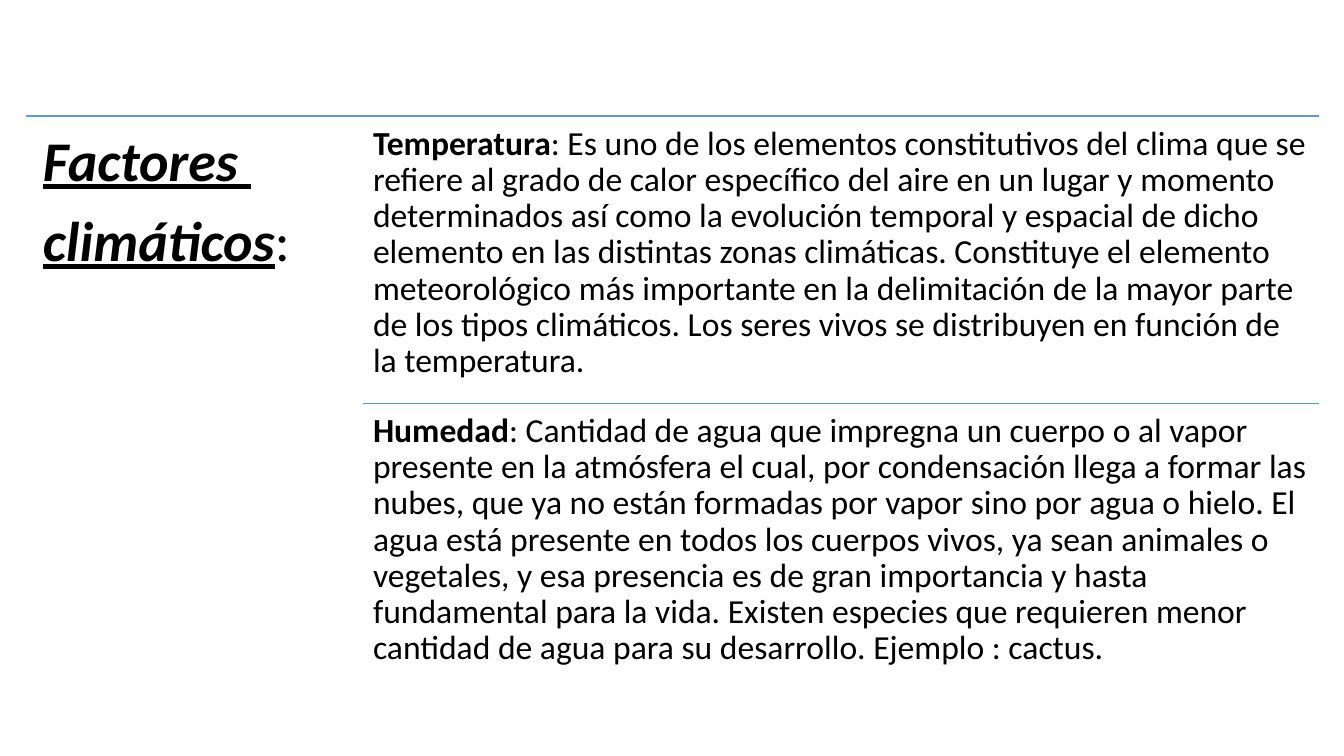
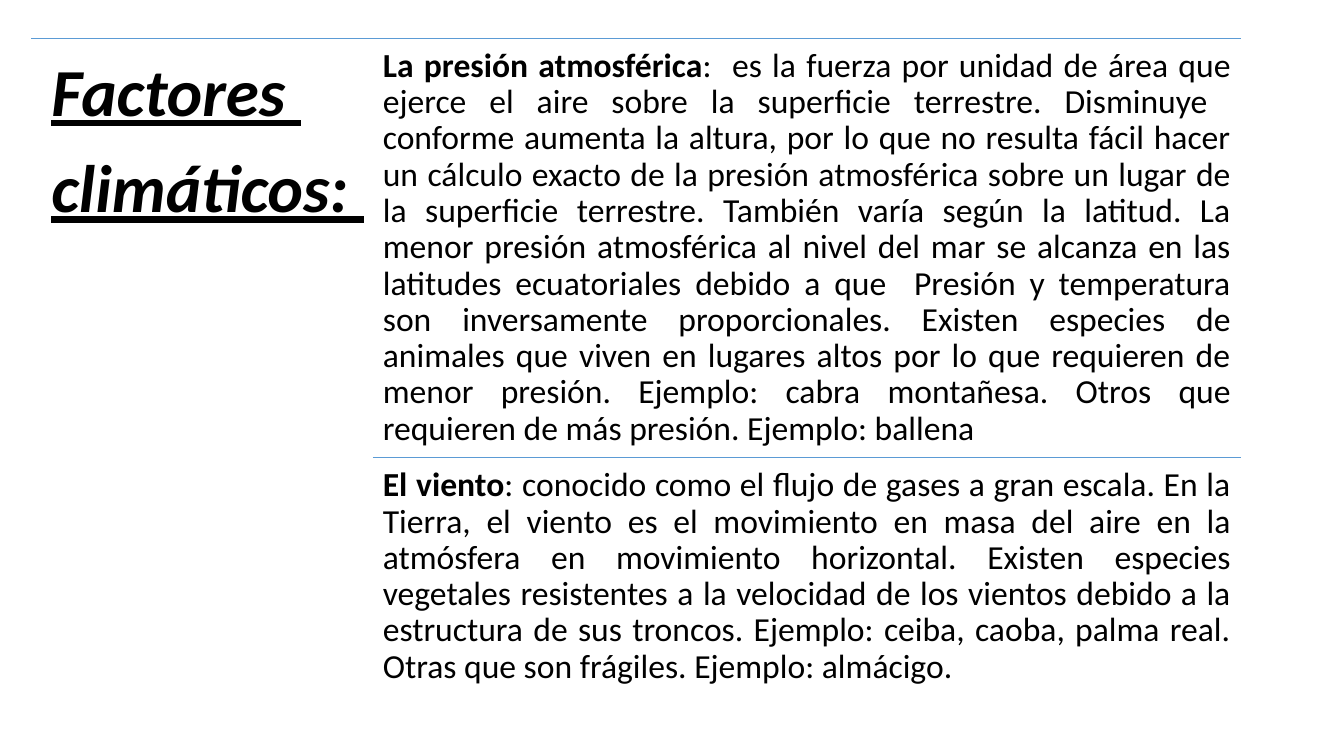
from dataclasses import dataclass
from typing import Any

from lxml.etree import SubElement
from pptx import Presentation
from pptx.dml.color import RGBColor
from pptx.enum.shapes import MSO_CONNECTOR
from pptx.enum.text import PP_ALIGN
from pptx.oxml.ns import qn
from pptx.util import Pt

# Shared style
INK, RULE = "000000", "5B9BD5"
FONT, BODY = "Calibri", 24
BOLD = {"bold": True}
HEAD = {"bold": True, "italic": True, "underline": True}
PLAIN = {"bold": False}

Run = tuple[str, dict[str, Any]]


@dataclass
class Block:
    left: float
    top: float
    width: float
    height: float
    rule: float  # length of the line along the top
    inset: float
    size: float
    paras: list[list[Run]]
    align: Any = None


@dataclass
class Topic:
    term: str
    text: str
    height: float


@dataclass
class Page:
    title: Block
    left: float
    width: float
    topics: list[Topic]
    align: Any = None


def color(code: str) -> RGBColor:
    return RGBColor.from_string(code)


def put(item: Any, values: dict[str, Any]) -> None:
    for name, value in values.items():
        setattr(item, name, value)


def draw_rule(slide: Any, left: float, top: float, width: float) -> None:
    line = slide.shapes.add_connector(
        MSO_CONNECTOR.STRAIGHT, Pt(left), Pt(top), Pt(left + width), Pt(top))
    line.line.color.rgb = color(RULE)
    line.line.width = Pt(1)
    SubElement(line._element.spPr, qn("a:effectLst"))


def draw_block(slide: Any, block: Block) -> None:
    draw_rule(slide, block.left, block.top, block.rule)
    box = slide.shapes.add_textbox(
        Pt(block.left), Pt(block.top), Pt(block.width), Pt(block.height))
    frame = box.text_frame
    sides = ("left", "top", "right", "bottom")
    put(frame, {"word_wrap": True}
        | {f"margin_{side}": Pt(block.inset) for side in sides})
    for index, runs in enumerate(block.paras):
        para = frame.add_paragraph() if index else frame.paragraphs[0]
        put(para, {"line_spacing": 0.9, "alignment": block.align,
                   "space_after": Pt(block.size * 0.35)})
        for text, style in runs:
            run = para.add_run()
            run.text = text
            put(run.font, {"name": FONT, "size": Pt(block.size)} | style)
            run.font.color.rgb = color(INK)


def draw_page(deck: Any, page: Page) -> None:
    slide = deck.slides.add_slide(deck.slide_layouts[6])
    draw_block(slide, page.title)
    # Topics stack downward from the top of the title
    top = page.title.top
    for topic in page.topics:
        paras = [[(topic.term, BOLD), (topic.text, PLAIN)]]
        draw_block(slide, Block(page.left, top, page.width, topic.height,
                                page.width, 7.2, BODY, paras, page.align))
        top += topic.height


# Content
PAGES = [
    Page(
        Block(18.72, 82.8, 264.24, 104.4, 537.84, 12, 40,
              [[("Factores ", HEAD)], [("climáticos", HEAD), (":", PLAIN)]]),
        259.4, 682.8,
        [
            Topic("Temperatura",
                  ": Es uno de los elementos constitutivos del clima que se "
                  "refiere al grado de calor específico del aire en un lugar y "
                  "momento determinados así como la evolución temporal y "
                  "espacial de dicho elemento en las distintas zonas "
                  "climáticas. Constituye el elemento meteorológico más "
                  "importante en la delimitación de la mayor parte de los "
                  "tipos climáticos. Los seres vivos se distribuyen en función "
                  "de la temperatura.", 205.2),
            Topic("Humedad",
                  ": Cantidad de agua que impregna un cuerpo o al vapor "
                  "presente en la atmósfera el cual, por condensación llega a "
                  "formar las nubes, que ya no están formadas por vapor sino "
                  "por agua o hielo. El agua está presente en todos los cuerpos "
                  "vivos, ya sean animales o vegetales, y esa presencia es de "
                  "gran importancia y hasta fundamental para la vida. Existen "
                  "especies que requieren menor cantidad de agua para su "
                  "desarrollo. Ejemplo : cactus.", 205.2),
        ],
    ),
    Page(
        Block(22.32, 27.36, 828, 104.4, 828, 14.4, 48,
              [[("Factores ", HEAD)], [("climáticos: ", HEAD)]]),
        266.4, 619.92,
        [
            Topic("La presión atmosférica",
                  ":  es la fuerza por unidad de área que ejerce el aire sobre "
                  "la superficie terrestre. Disminuye  conforme aumenta la "
                  "altura, por lo que no resulta fácil hacer un cálculo exacto "
                  "de la presión atmosférica sobre un lugar de la superficie "
                  "terrestre. También varía según la latitud. La menor presión "
                  "atmosférica al nivel del mar se alcanza en las latitudes "
                  "ecuatoriales debido a que  Presión y temperatura son "
                  "inversamente proporcionales. Existen especies de animales "
                  "que viven en lugares altos por lo que requieren de menor "
                  "presión. Ejemplo: cabra montañesa. Otros que requieren de "
                  "más presión. Ejemplo: ballena", 299.52),
            Topic("El viento",
                  ": conocido como el flujo de gases a gran escala. En la "
                  "Tierra, el viento es el movimiento en masa del aire en la "
                  "atmósfera en movimiento horizontal. Existen especies "
                  "vegetales resistentes a la velocidad de los vientos debido a "
                  "la estructura de sus troncos. Ejemplo: ceiba, caoba, palma "
                  "real. Otras que son frágiles. Ejemplo: almácigo.", 181.44),
        ],
        PP_ALIGN.JUSTIFY,
    ),
]


def main() -> None:
    deck = Presentation()
    put(deck, {"slide_width": Pt(960), "slide_height": Pt(540)})
    for page in PAGES:
        draw_page(deck, page)
    deck.save("out.pptx")


if __name__ == "__main__":
    main()
